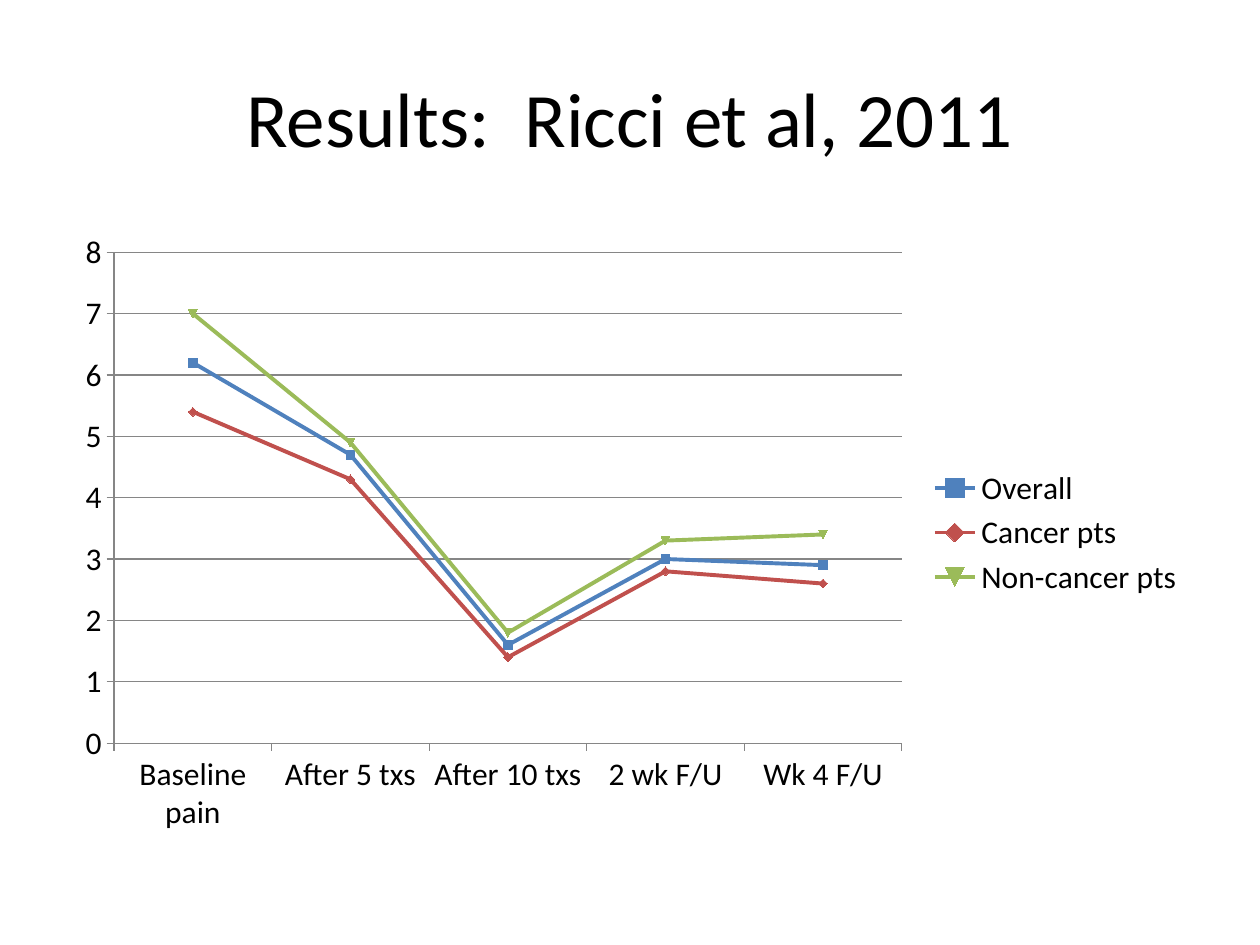
"""Build a slide with a line chart of pain scores over the course of treatment."""
from pptx import Presentation
from pptx.chart.data import CategoryChartData as ChartData
from pptx.dml.color import RGBColor
from pptx.enum.chart import XL_CHART_TYPE as ChartType
from pptx.enum.chart import XL_LEGEND_POSITION as LegendPosition
from pptx.enum.chart import XL_TICK_MARK as TickMark
from pptx.enum.text import MSO_ANCHOR as Anchor
from pptx.enum.text import PP_ALIGN as Align
from pptx.util import Cm, Pt

COLOURS = {
    "text": "000000",
    "axis": "868686",
    "Overall": "4F81BD",
    "Cancer pts": "C0504D",
    "Non-cancer pts": "9BBB59",
}
FONT = "Calibri"
SCORES = {
    "Overall": (6.2, 4.7, 1.6, 3, 2.9),
    "Cancer pts": (5.4, 4.3, 1.4, 2.8, 2.6),
    "Non-cancer pts": (7, 4.9, 1.8, 3.3, 3.4),
}


def style_font(font, size):
    font.name = FONT
    font.size = Pt(size)
    font.color.rgb = RGBColor.from_string(COLOURS["text"])


def style_line(line, colour, width):
    line.color.rgb = RGBColor.from_string(COLOURS[colour])
    line.width = Pt(width)


deck = Presentation()
deck.slide_width, deck.slide_height = Cm(25.4), Cm(19.05)
page = deck.slides.add_slide(deck.slide_layouts[6])

title_box = page.shapes.add_textbox(Cm(1.27), Cm(0.76), Cm(22.86), Cm(3.18))
title_box.text_frame.word_wrap = True
title_box.text_frame.vertical_anchor = Anchor.MIDDLE
para = title_box.text_frame.paragraphs[0]
para.alignment = Align.CENTER
span = para.add_run()
span.text = "Results:  Ricci et al, 2011"
style_font(span.font, 44)

pain_data = ChartData()
pain_data.categories = ["Baseline pain", "After 5 txs", "After 10 txs", "2 wk F/U", "Wk 4 F/U"]
for name, values in SCORES.items():
    pain_data.add_series(name, values)

chart = page.shapes.add_chart(
    ChartType.LINE_MARKERS, Cm(1.27), Cm(4.45), Cm(22.86), Cm(12.57), pain_data
).chart
style_font(chart.font, 18)
chart.has_title = False
chart.has_legend = True
chart.legend.position = LegendPosition.RIGHT
chart.legend.include_in_layout = False

for axis in (chart.category_axis, chart.value_axis):
    axis.major_tick_mark = TickMark.OUTSIDE
    axis.minor_tick_mark = TickMark.NONE
    style_line(axis.format.line, "axis", 0.75)
chart.value_axis.minimum_scale = 0
chart.value_axis.maximum_scale = 8
chart.value_axis.major_unit = 1
chart.value_axis.has_major_gridlines = True
style_line(chart.value_axis.major_gridlines.format.line, "axis", 0.75)

chart.plots[0].vary_by_categories = False
for series in chart.plots[0].series:
    series.smooth = False
    style_line(series.format.line, series.name, 2.25)

deck.save("out.pptx")
